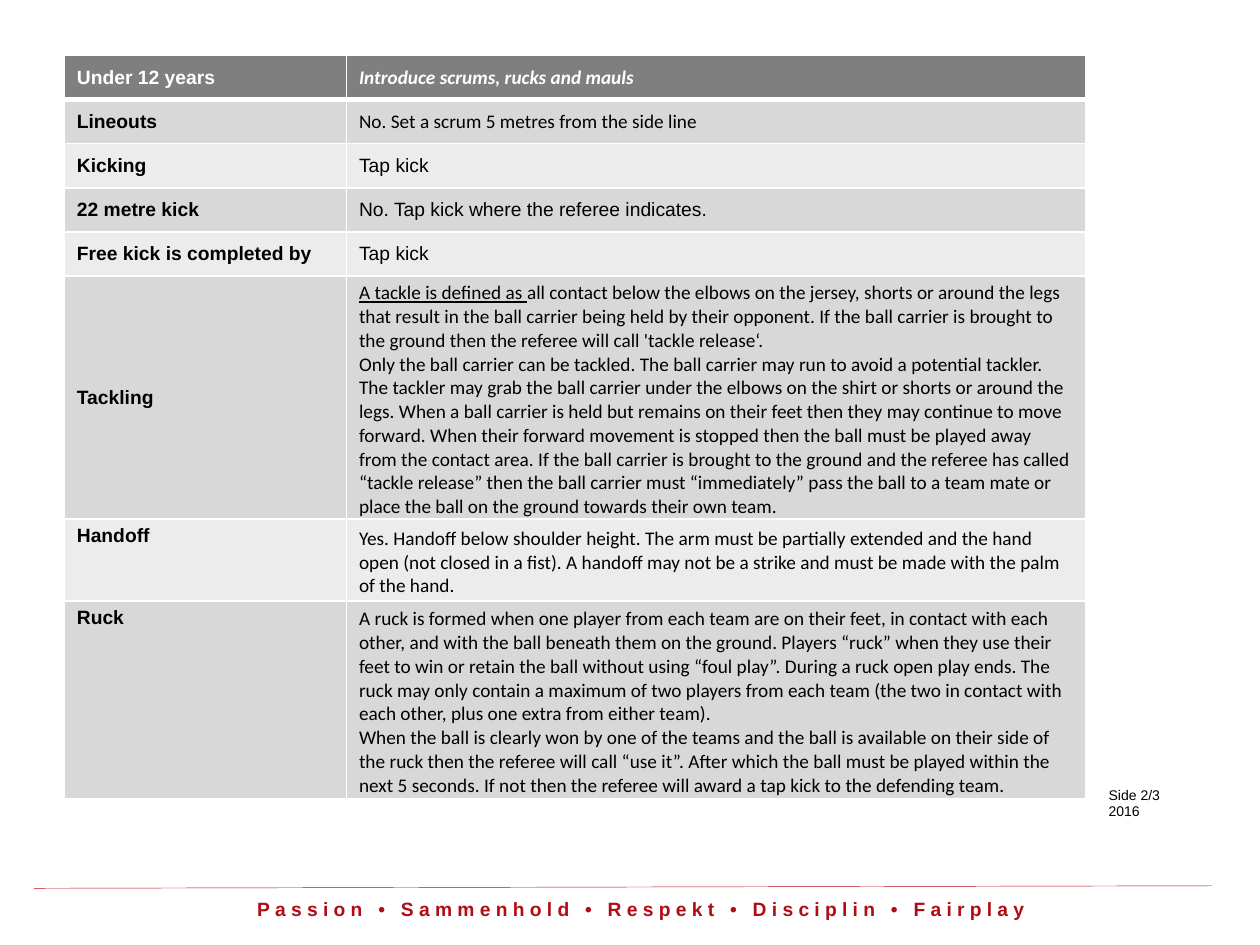
from lxml.etree import SubElement as Sub
from pptx import Presentation as Deck
from pptx.dml.color import RGBColor as Rgb
from pptx.enum.shapes import MSO_CONNECTOR as Conn
from pptx.enum.text import MSO_ANCHOR as Anchor, MSO_AUTO_SIZE as Auto, PP_ALIGN as Align
from pptx.oxml.ns import qn
from pptx.util import Inches, Pt

RED, BLACK, WHITE = "B10C15", "000000", "FFFFFF"
GREY, DARK, LIGHT = "7F7F7F", "D8D8D8", "ECECEC"
LEAD = "A tackle is defined as "
HEAD = ("Under 12 years", ["Introduce scrums, rucks and mauls"], 0.35, "Calibri")
BODY = [
    ("Lineouts", ["No. Set a scrum 5 metres from the side line"], 0.35, "Calibri"),
    ("Kicking", ["Tap kick"], 0.35, "Arial"),
    ("22 metre kick", ["No. Tap kick where the referee indicates."], 0.35, "Arial"),
    ("Free kick is completed by", ["Tap kick"], 0.35, "Arial"),
    ("Tackling", [
        LEAD + "all contact below the elbows on the jersey, shorts or around the legs "
        "that result in the ball carrier being held by their opponent. If the ball carrier "
        "is brought to the ground then the referee will call 'tackle release‘.",
        "Only the ball carrier can be tackled. The ball carrier may run to avoid "
        "a potential tackler.",
        "The tackler may grab the ball carrier under the elbows on the shirt or shorts or "
        "around the legs. When a ball carrier is held but remains on their feet then they may "
        "continue to move forward. When their forward movement is stopped then the ball must "
        "be played away from the contact area. If the ball carrier is brought to the ground "
        "and the referee has called “tackle release” then the ball carrier must “immediately” "
        "pass the ball to a team mate or place the ball on the ground towards their own team.",
    ], 1.93, "Calibri"),
    ("Handoff", [
        "Yes. Handoff below shoulder height. The arm must be partially extended and the hand "
        "open (not closed in a fist). A handoff may not be a strike and must be made with the "
        "palm of the hand.",
    ], 0.65, "Calibri"),
    ("Ruck", [
        "A ruck is formed when one player from each team are on their feet, in contact with "
        "each other, and with the ball beneath them on the ground. Players “ruck” when they "
        "use their feet to win or retain the ball without using “foul play”. During a ruck "
        "open play ends. The ruck may only contain a maximum of two players from each team "
        "(the two in contact with each other, plus one extra from either team).",
        "When the ball is clearly won by one of the teams and the ball is available on their "
        "side of the ruck then the referee will call “use it”. After which the ball must be "
        "played within the next 5 seconds. If not then the referee will award a tap kick to "
        "the defending team.",
    ], 1.57, "Calibri"),
]


def paint(fill, tone):
    fill.solid()
    fill.fore_color.rgb = Rgb.from_string(tone)


def add_run(para, text, tone, **look):
    run = para.add_run()
    run.text = text
    paint(run.font.fill, tone)
    for key, value in look.items():
        setattr(run.font, key, value)
    return run


def write(frame, lines, tone, **look):
    for num, line in enumerate(lines):
        para = frame.add_paragraph() if num else frame.paragraphs[0]
        if line.startswith(LEAD):
            add_run(para, LEAD, tone, underline=True, **look)
            line = line[len(LEAD):]
        add_run(para, line, tone, **look)


def add_text(slide, box, lines, tone, **look):
    frame = slide.shapes.add_textbox(*map(Inches, box)).text_frame
    frame.word_wrap = True
    frame.auto_size = Auto.SHAPE_TO_FIT_TEXT
    write(frame, lines, tone, name="Arial", **look)
    return frame.paragraphs[0]


def edge(cell, base):
    props = cell._tc.get_or_add_tcPr()
    for side in "LRTB":
        width = base if side == "B" else 1
        line = Sub(props, qn(f"a:ln{side}"), w=str(Pt(width)))
        Sub(Sub(line, qn("a:solidFill")), qn("a:srgbClr"), val=WHITE)


def fill_row(row, data, tone, ink, head=False):
    label, lines, high, face = data
    row.height = Inches(high)
    tall = high > 0.35
    left, right = row.cells
    for cell in (left, right):
        edge(cell, 3 if head else 1)
        paint(cell.fill, tone)
        cell.vertical_anchor = Anchor.MIDDLE
    if label in ("Handoff", "Ruck"):
        left.vertical_anchor = Anchor.TOP
    if tall:
        right.margin_top, right.margin_bottom = Inches(0.04), 0
    write(left.text_frame, [label], ink, name="Arial", size=Pt(11), bold=True)
    write(right.text_frame, lines, ink, name=face, size=Pt(11), bold=head, italic=head)


def add_rules(slide):
    size = len(BODY) + 1
    box = map(Inches, (0.51, 0.44, 8.11, 5.9))
    table = slide.shapes.add_table(size, 2, *box).table
    for col, wide in zip(table.columns, (2.24, 5.87)):
        col.width = Inches(wide)
    fill_row(table.rows[0], HEAD, GREY, WHITE, True)
    for num, data in enumerate(BODY):
        fill_row(table.rows[num + 1], data, LIGHT if num % 2 else DARK, BLACK)


def add_line(slide, ends, tone, width):
    line = slide.shapes.add_connector(Conn.STRAIGHT, *map(Inches, ends))
    paint(line.line.fill, tone)
    line.line.width = Pt(width)
    Sub(line._element.spPr, qn("a:effectLst"))


def main():
    deck = Deck()
    deck.slide_width, deck.slide_height = Inches(10), Inches(7.5)
    slide = deck.slides.add_slide(deck.slide_layouts[6])
    motto = add_text(slide, (1.68, 7.07, 6.82, 0.47),
                     ["Passion • Sammenhold • Respekt • Disciplin • Fairplay"],
                     RED, size=Pt(11), bold=True)
    motto.alignment = Align.CENTER
    motto.runs[0].font._element.set("spc", "300")
    add_line(slide, (0.27, 7.05, 9.62, 7.03), RED, 0.25)
    add_rules(slide)
    add_text(slide, (8.7, 6.19, 1.14, 0.37), ["Side 2/3", "2016"], BLACK, size=Pt(8))
    deck.save("out.pptx")


if __name__ == "__main__":
    main()
